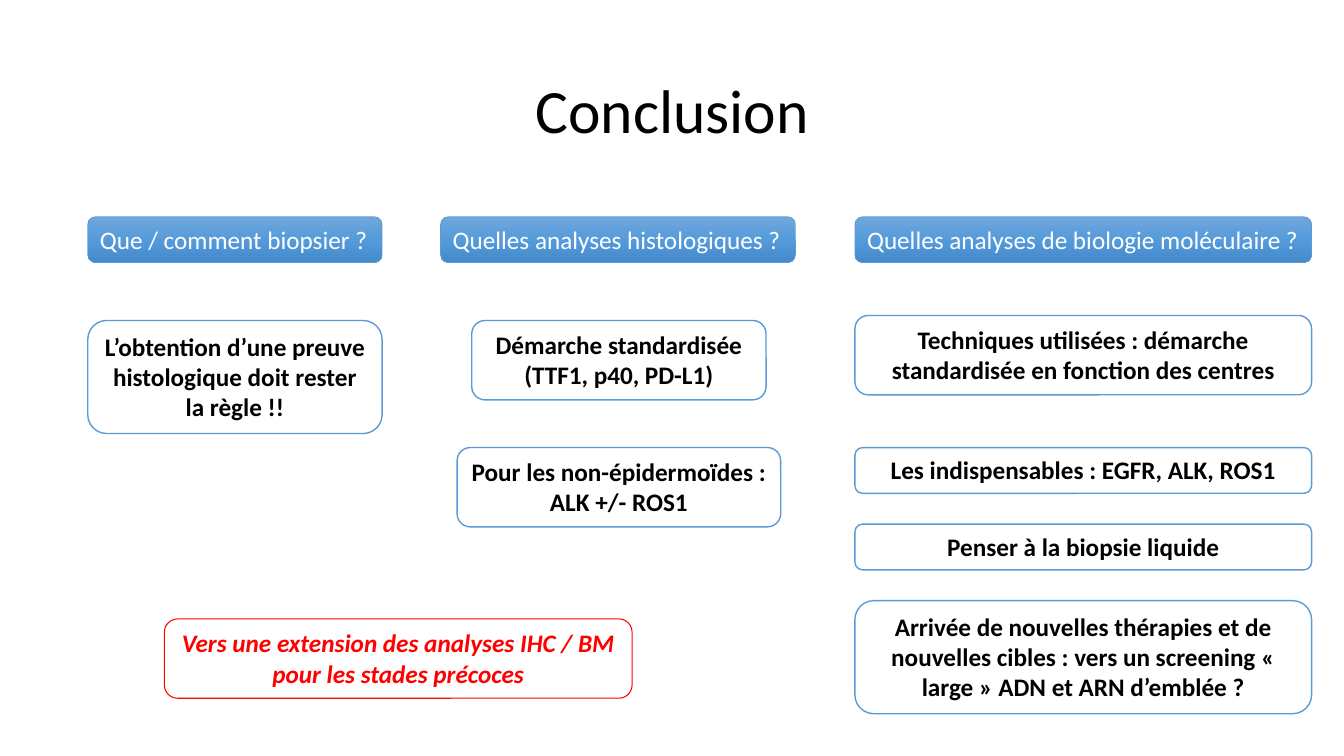
from copy import deepcopy
from dataclasses import dataclass
from enum import Enum

from pptx import Presentation
from pptx.dml.color import RGBColor
from pptx.enum.shapes import MSO_SHAPE
from pptx.enum.text import MSO_ANCHOR, MSO_AUTO_SIZE, PP_ALIGN
from pptx.oxml.ns import qn
from pptx.shapes.autoshape import Shape
from pptx.slide import Slide
from pptx.util import Inches, Pt


@dataclass(frozen=True)
class Theme:
    font: str = "Calibri"
    title_size: int = 44
    body_size: int = 18
    ink: str = "000000"
    paper: str = "FFFFFF"
    accent: str = "5B9BD5"
    alert: str = "FF0000"
    gradient: tuple[str, ...] = ("71A6DB", "559BDB", "448ACA")


class Kind(Enum):
    HEADER = "header"
    POINT = "point"
    OUTLOOK = "outlook"


@dataclass(frozen=True)
class Column:
    centre: float
    width: float


@dataclass(frozen=True)
class Card:
    text: str
    column: Column
    row: float
    lines: int = 1
    kind: Kind = Kind.POINT


THEME = Theme()
SLIDE_WIDTH, SLIDE_HEIGHT = Inches(13.33), Inches(7.5)
CARD_PADDING, LINE_HEIGHT = 1.6, 4.45

BIOPSY = Column(17.48, 21.9)
HISTOLOGY = Column(45.98, 26.4)
STANDARD = Column(46.05, 21.9)
NON_SQUAMOUS = Column(46.05, 24.08)
MOLECULAR = Column(80.6, 33.98)
EARLY_STAGES = Column(29.63, 34.8)

HEADER_ROW, FIRST_ROW, SECOND_ROW, ROW_STEP = 28.67, 42.4, 59.2, 10.13

CARDS = (
    Card("Que / comment biopsier ?", BIOPSY, HEADER_ROW, kind=Kind.HEADER),
    Card("Quelles analyses histologiques ?", HISTOLOGY, HEADER_ROW, kind=Kind.HEADER),
    Card("Quelles analyses de biologie moléculaire ?", MOLECULAR, HEADER_ROW, kind=Kind.HEADER),
    Card("L’obtention d’une preuve histologique doit rester la règle !!", BIOPSY, FIRST_ROW, 3),
    Card("Démarche standardisée (TTF1, p40, PD-L1)", STANDARD, FIRST_ROW, 2),
    Card("Pour les non-épidermoïdes : ALK +/- ROS1", NON_SQUAMOUS, SECOND_ROW, 2),
    Card("Techniques utilisées : démarche standardisée en fonction des centres",
         MOLECULAR, 41.73, 2),
    Card("Les indispensables : EGFR, ALK, ROS1", MOLECULAR, SECOND_ROW),
    Card("Penser à la biopsie liquide", MOLECULAR, SECOND_ROW + ROW_STEP),
    Card("Arrivée de nouvelles thérapies et de nouvelles cibles : vers un screening "
         "« large » ADN et ARN d’emblée ?", MOLECULAR, SECOND_ROW + 2 * ROW_STEP, 3),
    Card("Vers une extension des analyses IHC / BM pour les stades précoces",
         EARLY_STAGES, 81.87, 2, Kind.OUTLOOK),
)


def across(share: float) -> int:
    return round(SLIDE_WIDTH * share / 100)


def down(share: float) -> int:
    return round(SLIDE_HEIGHT * share / 100)


def write(box: Shape, text: str, size: int, colour: str, align: PP_ALIGN,
          bold: bool = False, italic: bool = False) -> None:
    box.text_frame.text = text
    para = box.text_frame.paragraphs[0]
    para.alignment = align
    for span in para.runs:
        span.font.name = THEME.font
        span.font.size = Pt(size)
        span.font.bold = bold
        span.font.italic = italic
        span.font.color.rgb = RGBColor.from_string(colour)


def fill_gradient(box: Shape) -> None:
    box.fill.gradient()
    box.fill.gradient_angle = 270
    stop_list = box.element.spPr.find(qn("a:gradFill")).find(qn("a:gsLst"))
    stop_list.insert(1, deepcopy(stop_list[0]))
    for index, (stop, colour) in enumerate(zip(box.fill.gradient_stops, THEME.gradient)):
        stop.position = index / 2
        stop.color.rgb = RGBColor.from_string(colour)


def add_title(page: Slide, text: str) -> None:
    box = page.shapes.add_textbox(across(6.9), down(5.33), across(86.27), down(19.33))
    box.text_frame.word_wrap = True
    box.text_frame.vertical_anchor = MSO_ANCHOR.MIDDLE
    write(box, text, THEME.title_size, THEME.ink, PP_ALIGN.CENTER)
    box.text_frame.paragraphs[0].line_spacing = 0.9


def add_card(page: Slide, card: Card) -> None:
    column = card.column
    box = page.shapes.add_shape(
        MSO_SHAPE.ROUNDED_RECTANGLE,
        across(column.centre - column.width / 2), down(card.row),
        across(column.width), down(CARD_PADDING + LINE_HEIGHT * card.lines))
    box.shadow.inherit = False
    header, outlook = card.kind is Kind.HEADER, card.kind is Kind.OUTLOOK
    if header:
        fill_gradient(box)
    elif outlook:
        box.fill.background()
    else:
        box.fill.solid()
        box.fill.fore_color.rgb = RGBColor.from_string(THEME.paper)
    line_colour = THEME.alert if outlook else THEME.accent
    box.line.color.rgb = RGBColor.from_string(line_colour)
    box.line.width = Pt({Kind.HEADER: 0.5, Kind.POINT: 1, Kind.OUTLOOK: 0.75}[card.kind])
    box.text_frame.word_wrap = not header
    box.text_frame.auto_size = MSO_AUTO_SIZE.SHAPE_TO_FIT_TEXT
    box.text_frame.vertical_anchor = MSO_ANCHOR.TOP
    colour = {Kind.HEADER: THEME.paper, Kind.POINT: THEME.ink, Kind.OUTLOOK: THEME.alert}[card.kind]
    align = PP_ALIGN.LEFT if header else PP_ALIGN.CENTER
    write(box, card.text, THEME.body_size, colour, align, bold=not header, italic=outlook)


def main() -> None:
    deck = Presentation()
    deck.slide_width, deck.slide_height = SLIDE_WIDTH, SLIDE_HEIGHT
    page = deck.slides.add_slide(deck.slide_layouts[6])
    add_title(page, "Conclusion")
    for card in CARDS:
        add_card(page, card)
    deck.save("out.pptx")


if __name__ == "__main__":
    main()
